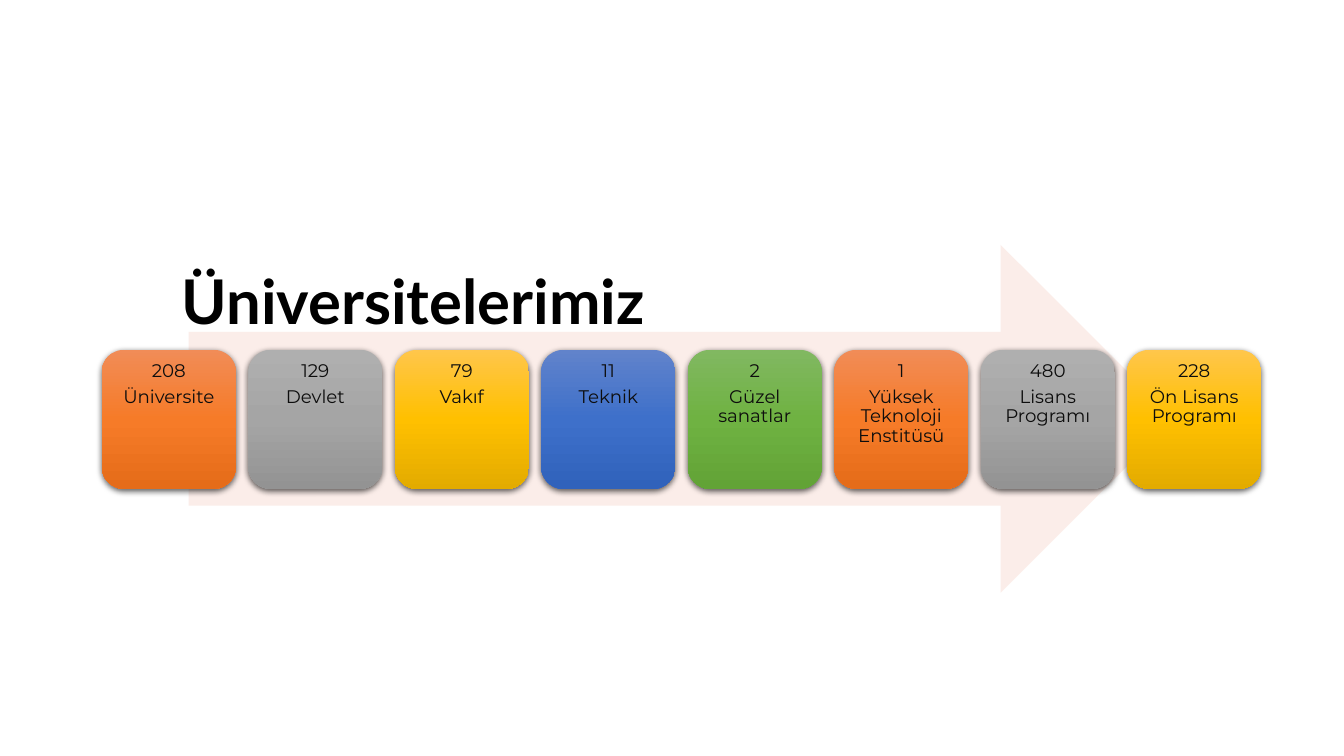
import pptx
import pptx.dml.color
import pptx.enum.shapes
import pptx.enum.text
import pptx.oxml
import pptx.oxml.ns
import pptx.util
from pptx.util import Inches

ORANGE = ("F18C57", "F67B28", "E56C19")
GRAY = ("AFAFAF", "A5A5A5", "939393")
GOLD = ("FFC64B", "FFC000", "E3AB00")
BLUE = ("6183CB", "3E70CA", "3062BB")
GREEN = ("81B861", "6FB242", "62A336")

CARDS = [
    ("208", "Üniversite", ORANGE),
    ("129", "Devlet", GRAY),
    ("79", "Vakıf", GOLD),
    ("11", "Teknik", BLUE),
    ("2", "Güzel sanatlar", GREEN),
    ("1", "Yüksek Teknoloji Enstitüsü", ORANGE),
    ("480", "Lisans Programı", GRAY),
    ("228", "Ön Lisans Programı", GOLD),
]
FIRST_LEFT, LAST_LEFT = 1.01, 11.18
CARD_TOP, CARD_WIDTH, CARD_HEIGHT = 3.47, 1.33, 1.38


def color(value):
    """Return the colour for a hex string."""
    return pptx.dml.color.RGBColor.from_string(value)


def parse(xml):
    """Parse a drawing element, declaring its namespace on the first tag."""
    return pptx.oxml.parse_xml(xml.replace(" ", f" {pptx.oxml.ns.nsdecls('a')} ", 1))


def format_paragraph(paragraph, font_name, size, font_color, bold=False):
    """Centre a paragraph and set its font."""
    paragraph.alignment = pptx.enum.text.PP_ALIGN.CENTER
    paragraph.line_spacing = 0.9
    paragraph.font.name = font_name
    paragraph.font.size = pptx.util.Pt(size)
    paragraph.font.bold = bold
    paragraph.font.color.rgb = color(font_color)


def fill_gradient(shape, colors):
    """Fill a shape from top to bottom with three evenly spaced colours."""
    shape.fill.gradient()
    shape.fill.gradient_angle = 270
    stops = shape._element.spPr.find(".//" + pptx.oxml.ns.qn("a:gsLst"))
    for stop in list(stops):
        stops.remove(stop)
    for index, value in enumerate(colors):
        stops.append(parse(
            f'<a:gs pos="{index * 50000}"><a:srgbClr val="{value}"/></a:gs>'))


def add_shadow(shape):
    """Add a soft shadow below a shape."""
    effects = shape._element.spPr.find(pptx.oxml.ns.qn("a:effectLst"))
    effects.append(parse(
        '<a:outerShdw blurRad="57150" dist="19050" dir="5400000" algn="ctr" rotWithShape="0">'
        '<a:srgbClr val="000000"><a:alpha val="63000"/></a:srgbClr></a:outerShdw>'))


def add_plain_shape(slide, kind, left, top, width, height):
    """Add a preset shape without line or shadow."""
    shape = slide.shapes.add_shape(
        kind, Inches(left), Inches(top), Inches(width), Inches(height))
    shape.line.fill.background()
    shape.shadow.inherit = False
    return shape


def add_title(slide, text):
    """Place and format the title placeholder."""
    title = slide.shapes.title
    title.left, title.top = Inches(0.16), Inches(2.3)
    title.width, title.height = Inches(7.88), Inches(1.45)
    frame = title.text_frame
    frame.text = text
    frame.auto_size = pptx.enum.text.MSO_AUTO_SIZE.NONE
    frame.vertical_anchor = pptx.enum.text.MSO_ANCHOR.MIDDLE
    format_paragraph(frame.paragraphs[0], "Lato", 44, "000000", bold=True)


def add_arrow(slide):
    """Add the pale translucent arrow behind the cards."""
    arrow = add_plain_shape(
        slide, pptx.enum.shapes.MSO_SHAPE.RIGHT_ARROW, 1.87, 2.43, 9.78, 3.45)
    arrow.fill.solid()
    arrow.fill.fore_color.rgb = color("F8D7CE")
    fill_color = arrow._element.spPr.find(".//" + pptx.oxml.ns.qn("a:srgbClr"))
    fill_color.append(parse('<a:alpha val="44000"/>'))


def add_card(slide, left, count, label, colors):
    """Add a rounded card with a count above its label."""
    card = add_plain_shape(
        slide, pptx.enum.shapes.MSO_SHAPE.ROUNDED_RECTANGLE,
        left, CARD_TOP, CARD_WIDTH, CARD_HEIGHT)
    fill_gradient(card, colors)
    add_shadow(card)
    frame = card.text_frame
    frame.word_wrap = True
    frame.vertical_anchor = pptx.enum.text.MSO_ANCHOR.TOP
    frame.margin_left = frame.margin_right = Inches(0.05)
    frame.margin_top = frame.margin_bottom = Inches(0.05)
    frame.text = f"{count}\n{label}"
    for paragraph in frame.paragraphs:
        format_paragraph(paragraph, "Montserrat", 13, "0D0D0D")
        paragraph.space_after = pptx.util.Pt(4.5)


def main():
    """Build the slide and save it."""
    presentation = pptx.Presentation()
    presentation.slide_width = Inches(13.33)
    presentation.slide_height = Inches(7.5)
    slide = presentation.slides.add_slide(presentation.slide_layouts[5])
    add_title(slide, "Üniversitelerimiz")
    add_arrow(slide)
    pitch = (LAST_LEFT - FIRST_LEFT) / (len(CARDS) - 1)
    for index, (count, label, colors) in enumerate(CARDS):
        add_card(slide, FIRST_LEFT + index * pitch, count, label, colors)
    presentation.save("out.pptx")


if __name__ == "__main__":
    main()
